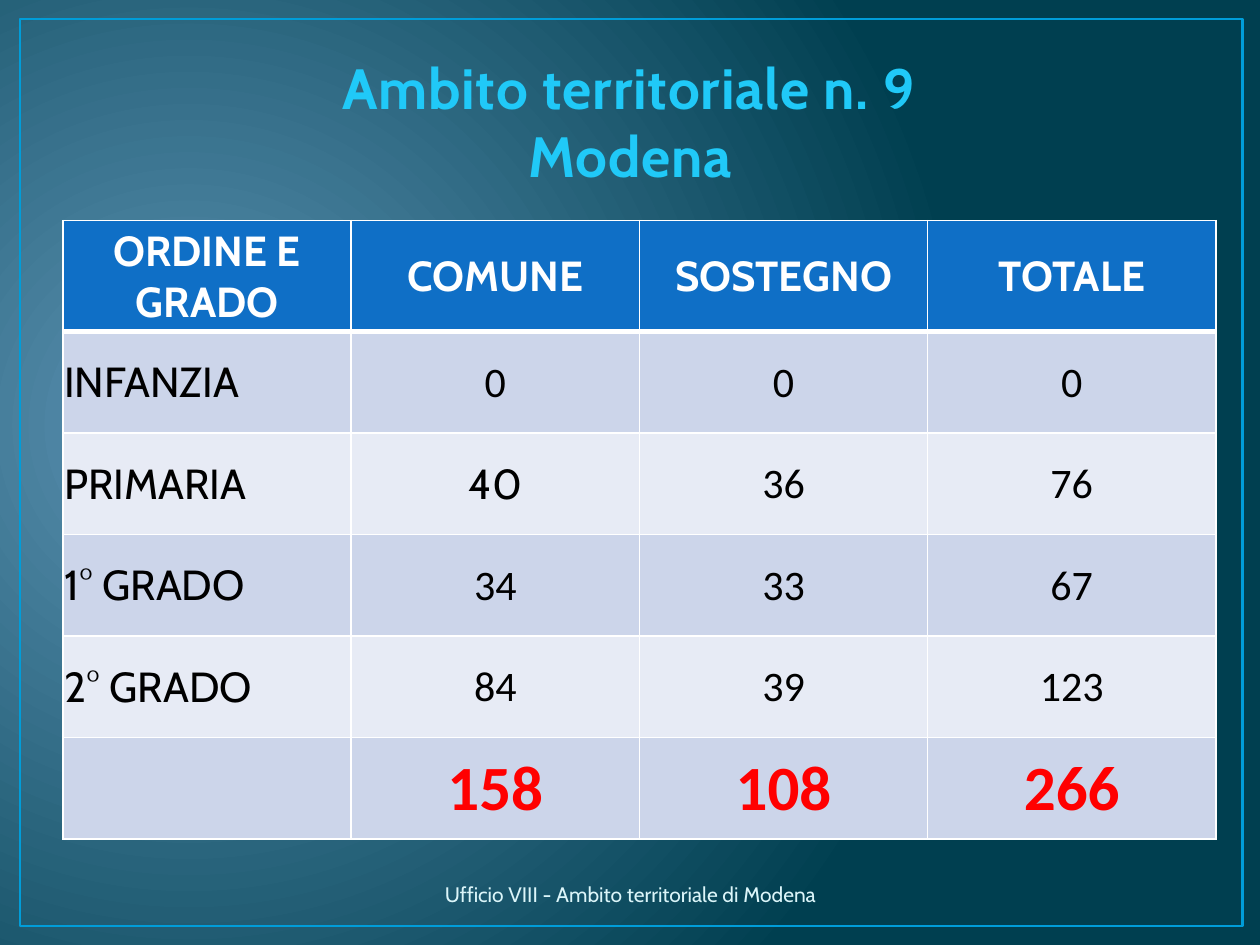
from dataclasses import dataclass

from lxml.etree import SubElement
from pptx import Presentation
from pptx.dml.color import RGBColor
from pptx.enum.shapes import MSO_SHAPE as Shape
from pptx.enum.text import MSO_ANCHOR as Anchor, PP_ALIGN as Align
from pptx.oxml import parse_xml
from pptx.oxml.ns import nsdecls, qn
from pptx.util import Inches, Pt


@dataclass(frozen=True)
class Theme:
    glow: str = "5C92B3"
    deep: str = "003F50"
    frame: str = "009DD9"
    title: str = "20C9F8"
    footer: str = "DBF5F9"
    header: str = "0F6FC6"
    bands: tuple = ("CCD5EA", "E7EBF5")
    white: str = "FFFFFF"
    black: str = "000000"
    total: str = "FF0000"
    heading_font: str = "Cabin"
    number_font: str = "Calibri"
    title_size: float = 32.4
    cell_size: float = 24
    total_size: float = 36
    footer_size: float = 12


@dataclass(frozen=True)
class Box:
    left: float
    top: float
    width: float
    height: float

    def inches(self):
        return [Inches(side) for side in (self.left, self.top, self.width, self.height)]


THEME = Theme()
HEADINGS = ("ORDINE E GRADO", "COMUNE", "SOSTEGNO", "TOTALE")
POSTS = (("INFANZIA", 0, 0), ("PRIMARIA", 40, 36), ("1° GRADO", 34, 33), ("2° GRADO", 84, 39))


def color(value):
    return RGBColor.from_string(value)


def write(text_frame, text, size, fill, font=THEME.heading_font, bold=False,
          align=Align.CENTER, spacing=0):
    para = text_frame.paragraphs[0]
    para.alignment = align
    for number, line in enumerate(text.split("\n")):
        if number:
            para.add_line_break()
        span = para.add_run()
        span.text = line
        span.font.name = font
        span.font.size = Pt(size)
        span.font.bold = bold
        span.font.color.rgb = color(fill)
        if spacing:
            span.font._element.set("spc", str(round(spacing * 100)))


def add_background(page):
    fill = page.background.fill
    fill.gradient()
    for stop, tone in zip(fill.gradient_stops, (THEME.glow, THEME.deep)):
        stop.color.rgb = color(tone)
    gradient = page._element.find(".//" + qn("a:gradFill"))
    gradient.remove(gradient.find(qn("a:lin")))
    circle = SubElement(gradient, qn("a:path"), {"path": "circle"})
    SubElement(circle, qn("a:fillToRect"), l="15000", t="50000", r="85000", b="60000")


def add_frame(page, box):
    frame = page.shapes.add_shape(Shape.RECTANGLE, *box.inches())
    frame.shadow.inherit = False
    frame.fill.background()
    frame.line.color.rgb = color(THEME.frame)
    frame.line.width = Pt(1.5)


def add_label(page, box, text, anchor, **text_format):
    text_frame = page.shapes.add_textbox(*box.inches()).text_frame
    text_frame.word_wrap = True
    text_frame.vertical_anchor = anchor
    write(text_frame, text, **text_format)


def add_borders(cell, top=1, bottom=1):
    properties = cell._tc.get_or_add_tcPr()
    widths = {"lnL": 1, "lnR": 1, "lnT": top, "lnB": bottom}
    for position, (side, width) in enumerate(widths.items()):
        properties.insert(position, parse_xml(
            f'<a:{side} {nsdecls("a")} w="{Pt(width)}"><a:solidFill>'
            f'<a:srgbClr val="{THEME.white}"/></a:solidFill></a:{side}>'))


def cell_format(row, column, text, last_row):
    if row == 0:
        return dict(size=THEME.cell_size, fill=THEME.white, bold=True)
    if row == last_row:
        return dict(size=THEME.total_size, fill=THEME.total, bold=True, font=THEME.number_font)
    style = dict(size=THEME.cell_size, fill=THEME.black)
    if column == 0:
        style["align"] = Align.LEFT
    elif text != "40":
        style["font"] = THEME.number_font
    return style


def add_posts_table(page, box, header_height=0.88):
    body = [(name, common, support, common + support) for name, common, support in POSTS]
    totals = [sum(values) for values in list(zip(*body))[1:]]
    rows = [HEADINGS, *body, ("", *totals)]
    last_row = len(rows) - 1
    table = page.shapes.add_table(len(rows), len(HEADINGS), *box.inches()).table
    table.horz_banding = False
    for column in table.columns:
        column.width = Inches(box.width / len(HEADINGS))
    for row, values in enumerate(rows):
        body_height = (box.height - header_height) / last_row
        table.rows[row].height = Inches(body_height if row else header_height)
        for column, value in enumerate(values):
            cell = table.cell(row, column)
            cell.margin_left = cell.margin_right = cell.margin_top = Inches(0.01)
            cell.margin_bottom = 0
            cell.vertical_anchor = Anchor.MIDDLE
            cell.fill.solid()
            cell.fill.fore_color.rgb = color(THEME.bands[(row - 1) % 2] if row else THEME.header)
            add_borders(cell, top=3 if row == 1 else 1, bottom=3 if row == 0 else 1)
            text = str(value)
            if text:
                write(cell.text_frame, text, **cell_format(row, column, text, last_row))


def main():
    deck = Presentation()
    deck.slide_width, deck.slide_height = Inches(10), Inches(7.5)
    page = deck.slides.add_slide(deck.slide_layouts[6])
    add_background(page)
    add_frame(page, Box(0.16, 0.15, 9.7, 7.2))
    add_label(page, Box(0.5, 0.3, 9, 1.25), "Ambito territoriale n. 9\nModena", Anchor.BOTTOM,
              size=THEME.title_size, fill=THEME.title, bold=True, spacing=0.5)
    add_posts_table(page, Box(0.5, 1.75, 9.15, 4.91))
    add_label(page, Box(3.1, 6.9, 3.81, 0.4), "Ufficio VIII - Ambito territoriale di Modena",
              Anchor.MIDDLE, size=THEME.footer_size, fill=THEME.footer)
    deck.save("out.pptx")


if __name__ == "__main__":
    main()
